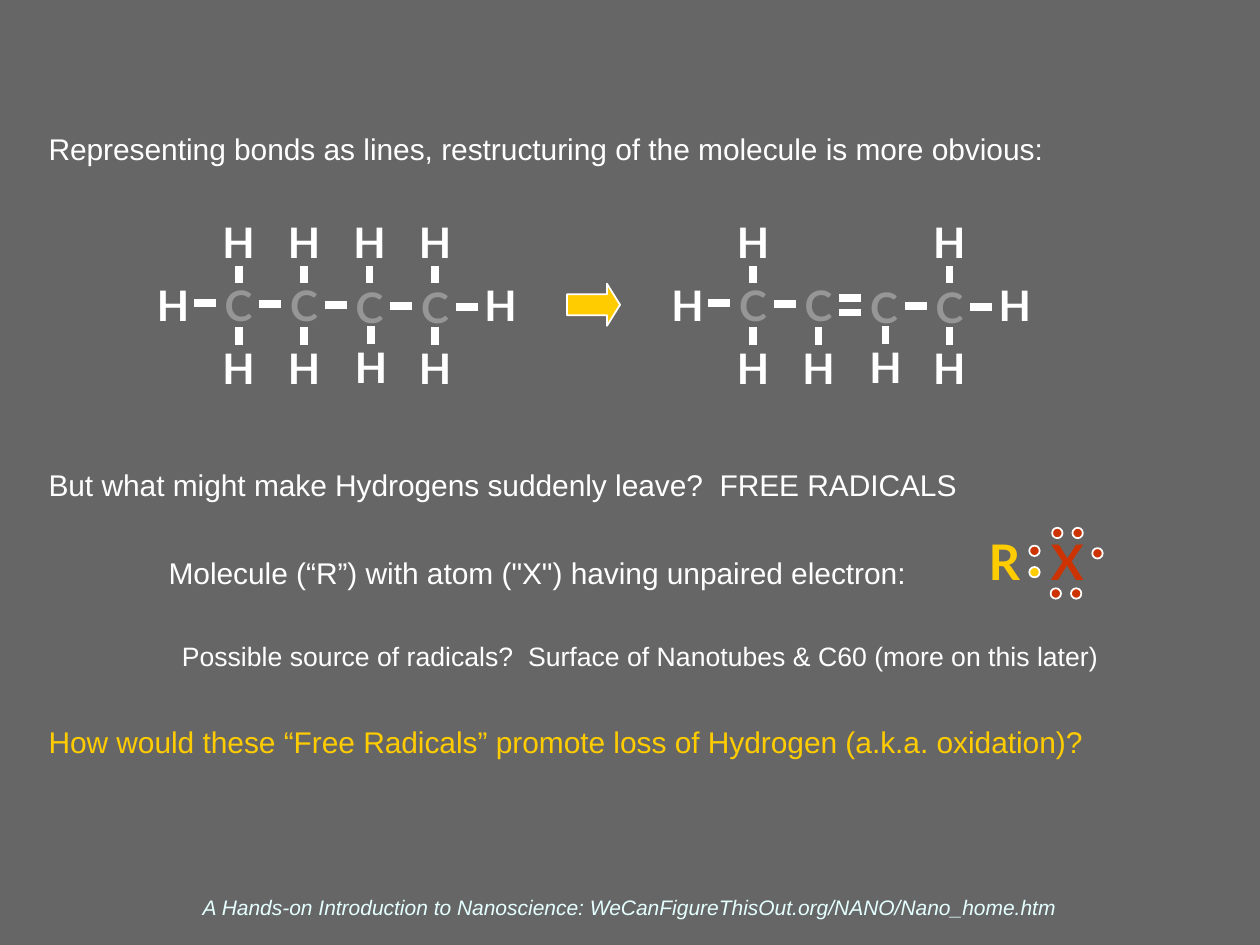
from lxml import etree
from pptx import Presentation
from pptx.dml.color import RGBColor
from pptx.enum import shapes, text
from pptx.oxml import ns
from pptx.util import Cm, Pt

GREY = RGBColor(0x66, 0x66, 0x66)
CARBON = RGBColor(0x96, 0x96, 0x96)
WHITE = RGBColor(0xFF, 0xFF, 0xFF)
YELLOW = RGBColor(0xFF, 0xCC, 0x00)
RED = RGBColor(0xCC, 0x33, 0x00)
PALE = RGBColor(0xE5, 0xFF, 0xFF)

ATOM_STEP, ROW_STEP, ATOM_WIDTH = 1.32, 1.27, 1.04
CARBONS = range(1, 5)


def add_box(page, left, top, width, height):
    """Add a wrapping text box with narrow margins."""
    box = page.shapes.add_textbox(Cm(left), Cm(top), Cm(width), Cm(height))
    frame = box.text_frame
    frame.word_wrap = True
    frame.margin_left = frame.margin_right = Cm(0.13)
    frame.margin_top = frame.margin_bottom = Cm(0.13)
    return box


def style(para, name, size, color):
    """Format every run of a paragraph."""
    for span in para.runs:
        span.font.name = name
        span.font.size = Pt(size)
        span.font.color.rgb = color


def add_symbol(page, symbol, left, top, width, height, size, color):
    """Add one bold centred chemical symbol."""
    box = add_box(page, left, top, width, height)
    box.text_frame.auto_size = text.MSO_AUTO_SIZE.SHAPE_TO_FIT_TEXT
    para = box.text_frame.paragraphs[0]
    para.text = symbol
    para.alignment = text.PP_ALIGN.CENTER
    style(para, "Lato", size, color)
    para.runs[0].font.bold = True


def add_atom(page, symbol, left, top):
    """Add a carbon or hydrogen letter."""
    color = CARBON if symbol == "C" else WHITE
    add_symbol(page, symbol, left, top, ATOM_WIDTH, ROW_STEP, 24, color)


def add_bond(page, left, top, right, bottom):
    """Add a thick white bond line."""
    bond = page.shapes.add_connector(
        shapes.MSO_CONNECTOR.STRAIGHT, Cm(left), Cm(top), Cm(right), Cm(bottom))
    bond.line.color.rgb = WHITE
    bond.line.width = Pt(4.5)
    etree.SubElement(bond._element.spPr, ns.qn("a:effectLst"))


def add_molecule(page, left, top, upper=CARBONS, double=None):
    """Draw a four-carbon chain with hydrogens and an optional double bond."""
    middle = top + ROW_STEP
    for column in range(6):
        x = left + column * ATOM_STEP
        symbol = "C" if column in CARBONS else "H"
        add_atom(page, symbol, x, middle + (0.03 if column in (3, 4) else 0))
        if column < 5:
            y = middle + 0.6 + 0.02 * column
            for shift in (-0.15, 0.15) if column == double else (0,):
                add_bond(page, x + 0.94, y + shift, x + 1.38, y + shift)
    for column in CARBONS:
        x = left + column * ATOM_STEP
        center = x + ATOM_WIDTH / 2
        if column in upper:
            add_atom(page, "H", x, top)
            add_bond(page, center, top + 1.12, center, top + 1.47)
        nudge = 0.03 if column == 3 else 0
        lower = top + 2 * ROW_STEP - nudge
        add_atom(page, "H", x + nudge, lower)
        add_bond(page, center + nudge, lower - 0.18, center + nudge, lower + 0.18)


def add_outlined(page, kind, left, top, width, height, color):
    """Add a filled preset shape with a thin white outline."""
    shape = page.shapes.add_shape(kind, Cm(left), Cm(top), Cm(width), Cm(height))
    shape.shadow.inherit = False
    shape.fill.solid()
    shape.fill.fore_color.rgb = color
    shape.line.color.rgb = WHITE
    shape.line.width = Pt(1)
    return shape


def add_arrow(page, left, top, width, height):
    """Draw the reaction arrow."""
    arrow = add_outlined(page, shapes.MSO_SHAPE.RIGHT_ARROW,
                         left, top, width, height, YELLOW)
    arrow.adjustments[0] = 0.5
    arrow.adjustments[1] = 0.31


def add_radical(page, left, top):
    """Draw the free radical with its electrons."""
    add_symbol(page, "X", left + 1.27, top, 1.17, 1.45, 28, RED)
    add_symbol(page, "R", left, top, 1.17, 1.45, 28, YELLOW)
    electrons = [(1.93, 1.27, RED), (2.36, 0.46, RED), (1.55, 0.05, RED),
                 (1.96, 0.05, RED), (1.09, 0.41, RED), (1.52, 1.27, RED),
                 (1.09, 0.84, YELLOW)]
    for x, y, color in electrons:
        add_outlined(page, shapes.MSO_SHAPE.OVAL, left + x, top + y, 0.21, 0.21, color)


def add_body(page, left, top, width, height):
    """Write the main statements in one text box."""
    frame = add_box(page, left, top, width, height).text_frame
    lines = [
        ("Representing bonds as lines, restructuring of the molecule is more obvious:",
         0, 17.1, WHITE),
        ("But what might make Hydrogens suddenly leave?  FREE RADICALS",
         171.5, 17.1, WHITE),
        ("Molecule (“R”) with atom (\"X\") having unpaired electron:", 29.3, 17.1, WHITE),
        ("Possible source of radicals?  Surface of Nanotubes & C60 (more on this later)",
         28.3, 15.2, WHITE),
        ("How would these “Free Radicals” promote loss of Hydrogen (a.k.a. oxidation)?",
         29.5, 17.1, YELLOW),
    ]
    frame.text = "\n".join(line[0] for line in lines)
    for para, (_, gap, size, color) in zip(frame.paragraphs, lines):
        para.space_before = Pt(gap)
        style(para, "Arial", size, color)
    molecule, source = frame.paragraphs[2:4]
    molecule._p.get_or_add_pPr().set("marL", str(Cm(2.42)))
    source.alignment = text.PP_ALIGN.CENTER


def add_footer(page, left, top, width, height):
    """Write the centred credit line."""
    frame = add_box(page, left, top, width, height).text_frame
    frame.vertical_anchor = text.MSO_ANCHOR.BOTTOM
    para = frame.paragraphs[0]
    para.text = ("A Hands-on Introduction to Nanoscience: "
                 "WeCanFigureThisOut.org/NANO/Nano_home.htm")
    para.alignment = text.PP_ALIGN.CENTER
    style(para, "Arial", 12, PALE)
    para.runs[0].font.italic = True


def main():
    """Build and save the slide."""
    deck = Presentation()
    deck.slide_width, deck.slide_height = Cm(25.4), Cm(19.05)
    page = deck.slides.add_slide(deck.slide_layouts[6])
    page.background.fill.solid()
    page.background.fill.fore_color.rgb = GREY
    add_footer(page, 0.85, 17.93, 23.7, 0.74)
    add_body(page, 0.85, 2.51, 24.13, 14.6)
    add_molecule(page, 2.97, 4.24)
    add_molecule(page, 13.34, 4.24, upper=(1, 4), double=2)
    add_arrow(page, 11.43, 5.72, 1.07, 0.85)
    add_radical(page, 19.66, 10.59)
    deck.save("out.pptx")


if __name__ == "__main__":
    main()
